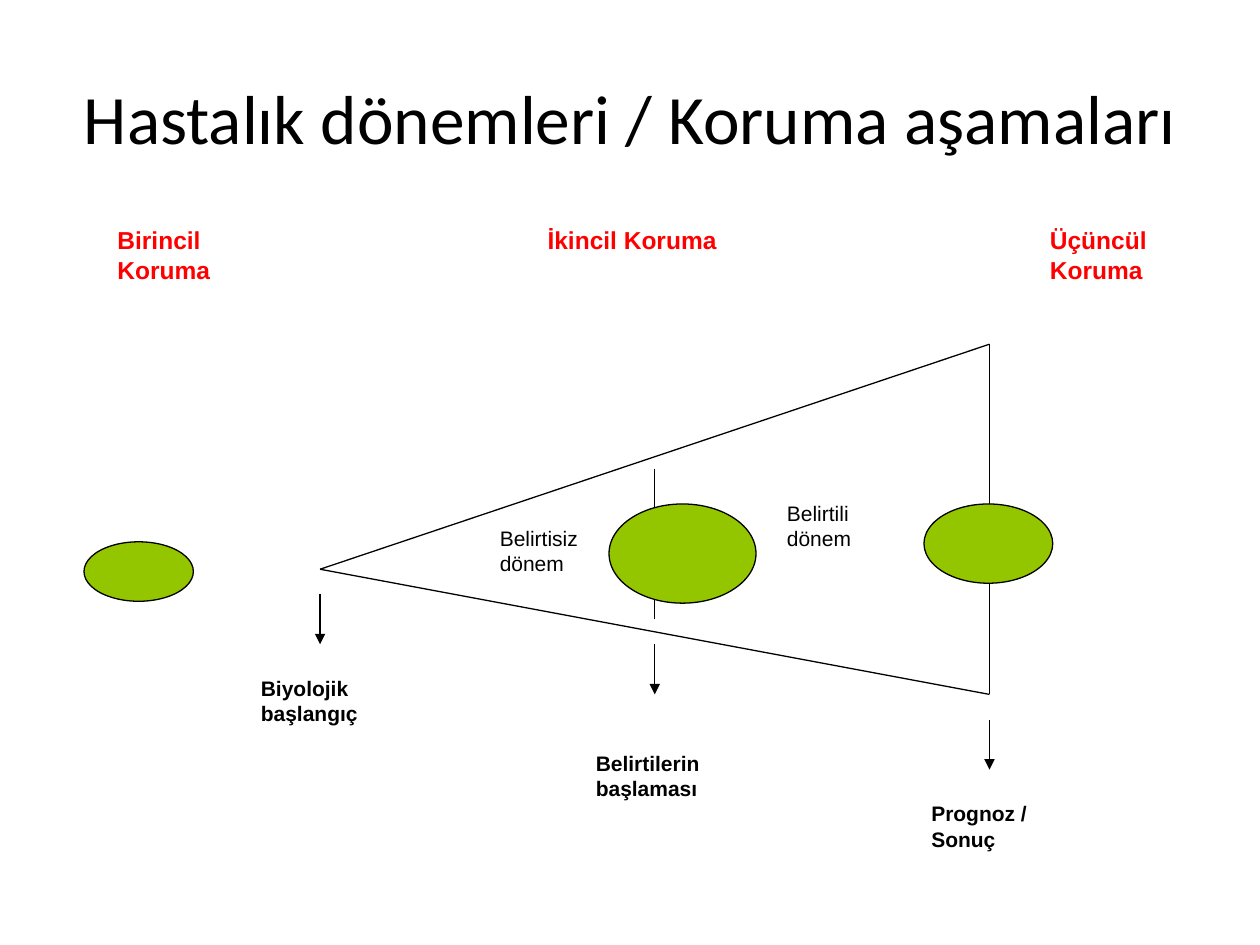
from dataclasses import dataclass

from lxml import etree
from pptx import Presentation
from pptx import util as u
from pptx.dml.color import RGBColor
from pptx.enum import shapes, text
from pptx.oxml import ns


@dataclass(frozen=True)
class Theme:
    black: RGBColor = RGBColor(0, 0, 0)
    white: RGBColor = RGBColor(255, 255, 255)
    red: RGBColor = RGBColor(255, 0, 0)
    green: RGBColor = RGBColor(0x94, 0xC6, 0)
    title_font: str = "Calibri"
    body_font: str = "Arial"
    title_size: float = 39.6
    stage_size: float = 14
    label_size: float = 12
    line_width: float = 0.75


@dataclass(frozen=True)
class Frame:
    left: float
    top: float
    width: float
    height: float

    def lengths(self) -> list[u.Length]:
        return [u.Pt(n) for n in (self.left, self.top, self.width, self.height)]


@dataclass(frozen=True)
class Label:
    words: str
    frame: Frame
    size: float
    color: RGBColor
    bold: bool = True


@dataclass(frozen=True)
class Line:
    start: tuple[float, float]
    end: tuple[float, float]
    arrow: bool = False


THEME = Theme()

# Moments of the disease, from left to right
ONSET_X, SYMPTOMS_X, OUTCOME_X = 182.9, 374.2, 565.4
ARROW_LENGTH = 28.5
APEX = (ONSET_X, 325.3)
UPPER = (OUTCOME_X, 196.7)
LOWER = (OUTCOME_X, 396.8)

LINES = [
    Line(APEX, UPPER),
    Line(APEX, LOWER),
    Line(UPPER, LOWER),
    Line((SYMPTOMS_X, 268), (SYMPTOMS_X, 354)),
] + [
    Line((x, top), (x, top + ARROW_LENGTH), arrow=True)
    for x, top in ((SYMPTOMS_X, 368.3), (OUTCOME_X, 411.3), (ONSET_X, 339.7))
]


def moment(words: str, frame: Frame) -> Label:
    return Label(words, frame, THEME.label_size, THEME.black)


def period(words: str, frame: Frame) -> Label:
    return Label(words, frame, THEME.label_size, THEME.black, bold=False)


def stage(words: str, left: float, width: float, height: float) -> Label:
    """Describe a protection stage in the heading row."""
    frame = Frame(left, 125.3, width, height)
    return Label(words, frame, THEME.stage_size, THEME.red)


LABELS = [
    moment("Prognoz / Sonuç", Frame(525.1, 454.1, 95.6, 43)),
    moment("Belirtilerin başlaması", Frame(333.4, 425.5, 109.6, 57.2)),
    moment("Biyolojik başlangıç", Frame(142, 382.5, 95.6, 57.2)),
    period("Belirtili dönem", Frame(442.6, 282.4, 82, 57.2)),
    period("Belirtisiz dönem", Frame(278.5, 296.7, 82, 28.6)),
    stage("Birincil Koruma", 60, 95.6, 71.5),
    stage("İkincil Koruma", 305.8, 150.3, 57.2),
    stage("Üçüncül Koruma", 592.8, 95.6, 57.2),
]

OVALS = [
    Frame(48, 309.6, 62.5, 34),
    Frame(348, 288, 84, 56.7),
    Frame(528, 288, 73.6, 45.3),
]


def format_title(title) -> None:
    title.left, title.top, title.width, title.height = Frame(36, 21.6, 648, 90).lengths()
    frame = title.text_frame
    frame.text = "Hastalık dönemleri / Koruma aşamaları"
    frame.vertical_anchor = text.MSO_ANCHOR.MIDDLE
    para = frame.paragraphs[0]
    para.alignment = text.PP_ALIGN.CENTER
    para.font.name = THEME.title_font
    para.font.size = u.Pt(THEME.title_size)
    para.font.color.rgb = THEME.black


def draw_line(page, line: Line) -> None:
    ends = [u.Pt(n) for n in line.start + line.end]
    connector = page.shapes.add_connector(shapes.MSO_CONNECTOR.STRAIGHT, *ends)
    connector.line.color.rgb = THEME.black
    connector.line.width = u.Pt(THEME.line_width)
    properties = connector._element.spPr
    if line.arrow:
        outline = properties.find(ns.qn("a:ln"))
        etree.SubElement(outline, ns.qn("a:tailEnd"), type="triangle")
    etree.SubElement(properties, ns.qn("a:effectLst"))


def add_filled(page, kind, frame: Frame, color: RGBColor):
    shape = page.shapes.add_shape(kind, *frame.lengths())
    shape.shadow.inherit = False
    shape.fill.solid()
    shape.fill.fore_color.rgb = color
    return shape


def draw_label(page, label: Label) -> None:
    box = add_filled(page, shapes.MSO_SHAPE.RECTANGLE, label.frame, THEME.white)
    box.line.fill.background()
    frame = box.text_frame
    frame.text = label.words
    frame.word_wrap = True
    frame.vertical_anchor = text.MSO_ANCHOR.TOP
    para = frame.paragraphs[0]
    para.alignment = text.PP_ALIGN.LEFT
    para.font.name = THEME.body_font
    para.font.size = u.Pt(label.size)
    para.font.bold = label.bold
    para.font.color.rgb = label.color


def draw_oval(page, frame: Frame) -> None:
    oval = add_filled(page, shapes.MSO_SHAPE.OVAL, frame, THEME.green)
    oval.line.color.rgb = THEME.black
    oval.line.width = u.Pt(THEME.line_width)


def main() -> None:
    deck = Presentation()
    deck.slide_width, deck.slide_height = u.Pt(720), u.Pt(540)
    page = deck.slides.add_slide(deck.slide_layouts.get_by_name("Title Only"))
    format_title(page.shapes.title)
    for line in LINES:
        draw_line(page, line)
    for label in LABELS:
        draw_label(page, label)
    for frame in OVALS:
        draw_oval(page, frame)
    deck.save("out.pptx")


if __name__ == "__main__":
    main()
